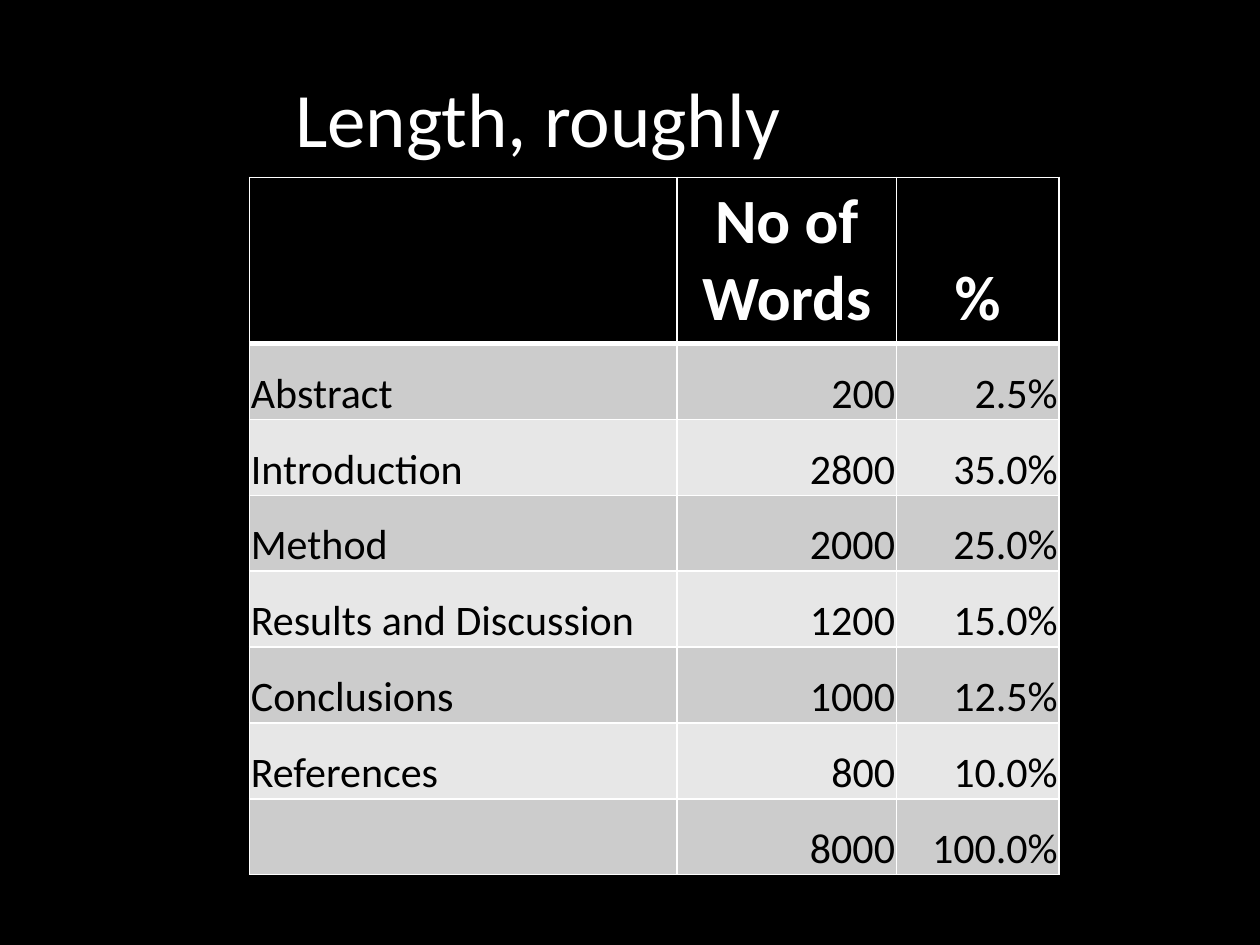
from lxml import etree
from pptx import Presentation
from pptx.dml.color import RGBColor
from pptx.enum import text
from pptx.oxml import ns
from pptx.util import Pt

FONT = "Calibri"
COLORS = {"black": "000000", "white": "FFFFFF", "dark_band": "CCCCCC", "light_band": "E7E7E7"}
ROWS = [
    ("", "No of Words", "%"),
    ("Abstract", "200", "2.5%"),
    ("Introduction", "2800", "35.0%"),
    ("Method", "2000", "25.0%"),
    ("Results and Discussion", "1200", "15.0%"),
    ("Conclusions", "1000", "12.5%"),
    ("References", "800", "10.0%"),
    ("", "8000", "100.0%"),
]
COLUMN_WIDTHS = (244.3, 125.3, 93)
HEADER_HEIGHT, ROW_HEIGHT = 95, 43.35
LEFT, CENTER, RIGHT = text.PP_ALIGN.LEFT, text.PP_ALIGN.CENTER, text.PP_ALIGN.RIGHT


def color(name):
    return RGBColor.from_string(COLORS[name])


def style_paragraph(p, size, color_name, align, bold=False):
    p.alignment = align
    p.font.size = Pt(size)
    p.font.bold = bold
    for r in p.runs:
        r.font.name = FONT
        r.font.size = Pt(size)
        r.font.bold = bold
        r.font.color.rgb = color(color_name)


def add_title(s, title):
    tf = s.shapes.add_textbox(Pt(36.7), Pt(21.6), Pt(541.4), Pt(90)).text_frame
    tf.word_wrap = True
    tf.vertical_anchor = text.MSO_ANCHOR.MIDDLE
    tf.text = title
    style_paragraph(tf.paragraphs[0], 44, "white", CENTER)


def set_borders(cell, top, bottom):
    """Draw white borders; must run before the cell is filled."""
    tc_pr = cell._tc.get_or_add_tcPr()
    for side, width in (("L", 1), ("R", 1), ("T", top), ("B", bottom)):
        ln = etree.SubElement(tc_pr, ns.qn(f"a:ln{side}"), w=str(Pt(width)))
        fill = etree.SubElement(ln, ns.qn("a:solidFill"))
        etree.SubElement(fill, ns.qn("a:srgbClr"), val=COLORS["white"])


def fill_cell(cell, value, fill_name):
    cell.vertical_anchor = text.MSO_ANCHOR.BOTTOM
    cell.text = value
    cell.fill.solid()
    cell.fill.fore_color.rgb = color(fill_name)


def format_header_cell(cell, value):
    set_borders(cell, 1, 3)
    fill_cell(cell, value, "black")
    style_paragraph(cell.text_frame.paragraphs[0], 36, "white", CENTER, bold=True)


def format_body_cell(cell, value, row, column):
    set_borders(cell, 3 if row == 1 else 1, 1)
    fill_cell(cell, value, "dark_band" if row % 2 else "light_band")
    cell.margin_left = cell.margin_right = cell.margin_top = Pt(0.75)
    cell.margin_bottom = 0
    style_paragraph(cell.text_frame.paragraphs[0], 24, "black", RIGHT if column else LEFT)


def add_length_table(s):
    height = HEADER_HEIGHT + ROW_HEIGHT * (len(ROWS) - 1)
    table = s.shapes.add_table(len(ROWS), len(COLUMN_WIDTHS), Pt(142.6), Pt(101.4),
                               Pt(sum(COLUMN_WIDTHS)), Pt(height)).table
    for column, width in zip(table.columns, COLUMN_WIDTHS):
        column.width = Pt(width)
    for i, values in enumerate(ROWS):
        table.rows[i].height = Pt(ROW_HEIGHT if i else HEADER_HEIGHT)
        for j, value in enumerate(values):
            if i == 0:
                format_header_cell(table.cell(i, j), value)
            else:
                format_body_cell(table.cell(i, j), value, i, j)


def main():
    prs = Presentation()
    prs.slide_width, prs.slide_height = Pt(720), Pt(540)
    s = prs.slides.add_slide(prs.slide_layouts[6])
    s.background.fill.solid()
    s.background.fill.fore_color.rgb = color("black")
    add_title(s, "Length, roughly")
    add_length_table(s)
    prs.save("out.pptx")


if __name__ == "__main__":
    main()
